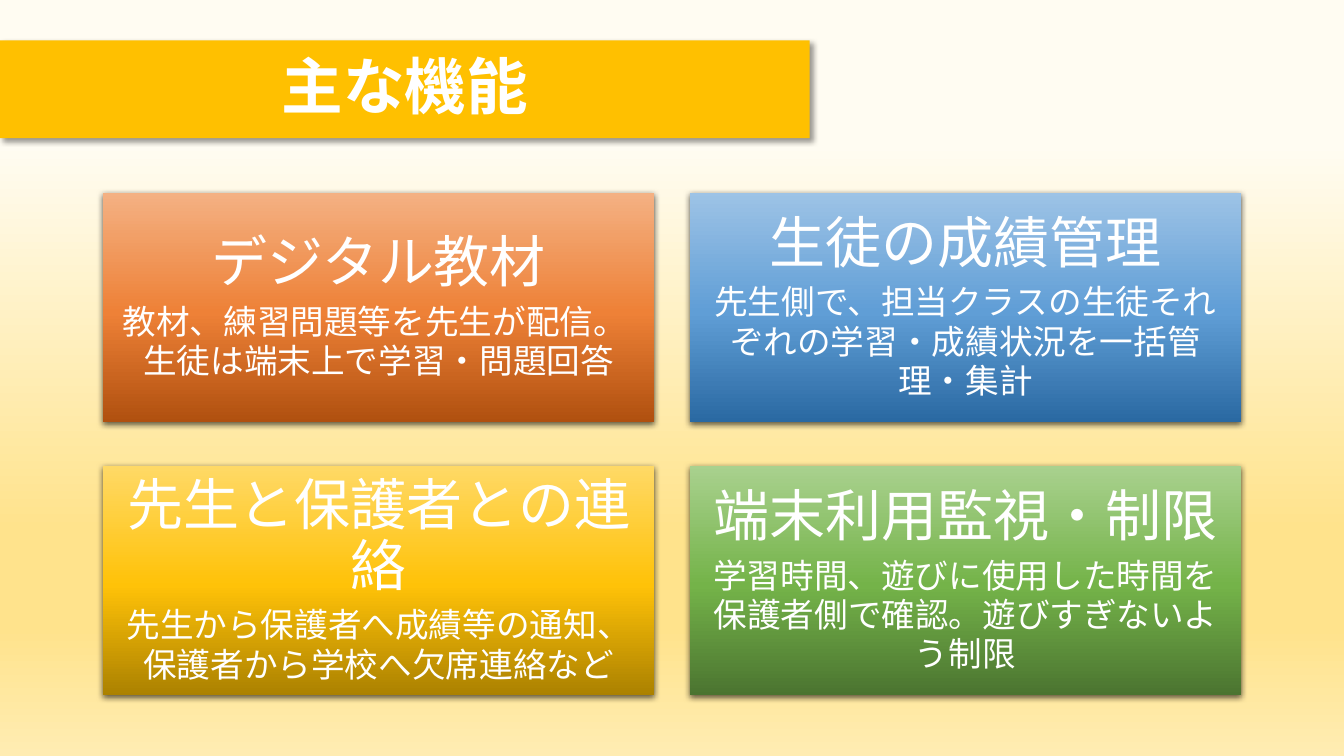
from lxml.etree import SubElement
from pptx import Presentation
from pptx.dml.color import RGBColor
from pptx.enum.shapes import MSO_SHAPE
from pptx.enum.text import MSO_ANCHOR, MSO_AUTO_SIZE, PP_ALIGN
from pptx.oxml.ns import qn
from pptx.util import Inches, Pt

FONT = "Noto Sans CJK JP"
COLORS = {"white": "FFFFFF", "banner": "FFC000", "shadow": "000000"}
BACKGROUND = [(19, "FFFCF2"), (70, "FFE38C"), (83, "FFE38C"), (100, "FFECB2")]
CARD_STOPS = (0, 48, 100)
GRID = {"left": 1.02, "top": 1.91, "width": 5.47, "height": 2.28,
        "column_step": 5.82, "row_step": 2.71, "columns": 2}
FEATURES = [
    ("デジタル教材", ["教材、練習問題等を先生が配信。 ", "生徒は端末上で学習・問題回答"],
     ("B0500F", "EE8137", "F4B183")),
    ("生徒の成績管理", ["先生側で、担当クラスの生徒それぞれの学習・成績状況を一括管理・集計"],
     ("2A69A2", "609ED6", "9DC3E6")),
    ("先生と保護者との連絡", ["先生から保護者へ成績等の通知、", "保護者から学校へ欠席連絡など"],
     ("AB8100", "FFC208", "FFD966")),
    ("端末利用監視・制限", ["学習時間、遊びに使用した時間を保護者側で確認。遊びすぎないよう制限"],
     ("4B7430", "74B349", "A9D18E")),
]


def add_gradient(fill, element, stops, angle):
    """Fill with the given (percent, colour) stops at a counter-clockwise angle."""
    fill.gradient()
    fill.gradient_angle = angle
    stop_list = next(element.iter(qn("a:gsLst")))
    for stop in list(stop_list):
        stop_list.remove(stop)
    for percent, color in stops:
        stop = SubElement(stop_list, qn("a:gs"), pos=str(percent * 1000))
        SubElement(stop, qn("a:srgbClr"), val=color)


def add_shadow(shape, opacity, blur, distance, direction):
    """Give the shape an outer shadow, with lengths in points."""
    shape.shadow.inherit = False
    effects = shape._element.spPr.find(qn("a:effectLst"))
    shadow = SubElement(effects, qn("a:outerShdw"), blurRad=str(Pt(blur)),
                        dist=str(Pt(distance)), dir=str(direction * 60000),
                        algn="tl", rotWithShape="0")
    color = SubElement(shadow, qn("a:srgbClr"), val=COLORS["shadow"])
    SubElement(color, qn("a:alpha"), val=str(opacity * 1000))


def add_text(paragraph, text, size, spacing, bold=False):
    """Write one centred white run into the paragraph."""
    paragraph.alignment = PP_ALIGN.CENTER
    paragraph.line_spacing = spacing
    run = paragraph.add_run()
    run.text = text
    run.font.size = Pt(size)
    run.font.bold = bold
    run.font.name = FONT
    run.font.color.rgb = RGBColor.from_string(COLORS["white"])
    SubElement(run.font._element, qn("a:ea"), typeface=FONT)


def add_banner(slide, text, left, top, width, height):
    """Turn the title placeholder into the banner in the given box."""
    title = slide.shapes.title
    title.left, title.top = Inches(left), Inches(top)
    title.width, title.height = Inches(width), Inches(height)
    geometry = SubElement(title._element.spPr, qn("a:prstGeom"), prst="homePlate")
    guides = SubElement(geometry, qn("a:avLst"))
    SubElement(guides, qn("a:gd"), name="adj", fmla="val 727")
    title.fill.solid()
    title.fill.fore_color.rgb = RGBColor.from_string(COLORS["banner"])
    add_shadow(title, 40, 4, 3, 45)
    frame = title.text_frame
    frame.auto_size = MSO_AUTO_SIZE.NONE
    frame.vertical_anchor = MSO_ANCHOR.MIDDLE
    add_text(frame.paragraphs[0], text, 44, 0.9, bold=True)


def add_card(slide, feature, left, top, width, height):
    """Draw one feature card with its heading and description."""
    heading, lines, colors = feature
    card = slide.shapes.add_shape(MSO_SHAPE.RECTANGLE, Inches(left), Inches(top),
                                  Inches(width), Inches(height))
    add_gradient(card.fill, card._element, zip(CARD_STOPS, colors), 90)
    card.line.fill.background()
    add_shadow(card, 63, 4.5, 1.5, 90)
    frame = card.text_frame
    frame.word_wrap = True
    frame.vertical_anchor = MSO_ANCHOR.MIDDLE
    frame.margin_left = frame.margin_right = Inches(0.17)
    frame.margin_top = frame.margin_bottom = Inches(0.17)
    add_text(frame.paragraphs[0], heading, 40, 0.9)
    frame.paragraphs[0].space_after = Pt(5)
    for line in lines:
        add_text(frame.add_paragraph(), line, 24, Pt(28))


def add_feature_grid(slide, features, grid):
    """Place the feature cards row by row on the grid."""
    for index, feature in enumerate(features):
        row, column = divmod(index, grid["columns"])
        add_card(slide, feature, grid["left"] + column * grid["column_step"],
                 grid["top"] + row * grid["row_step"], grid["width"], grid["height"])


def main():
    """Build and save the presentation."""
    presentation = Presentation()
    presentation.slide_width = Inches(13.33)
    presentation.slide_height = Inches(7.5)
    slide = presentation.slides.add_slide(presentation.slide_layouts[5])
    add_gradient(slide.background.fill, slide._element, BACKGROUND, 270)
    add_banner(slide, "主な機能", 0, 0.4, 8.03, 0.97)
    add_feature_grid(slide, FEATURES, GRID)
    presentation.save("out.pptx")


if __name__ == "__main__":
    main()
